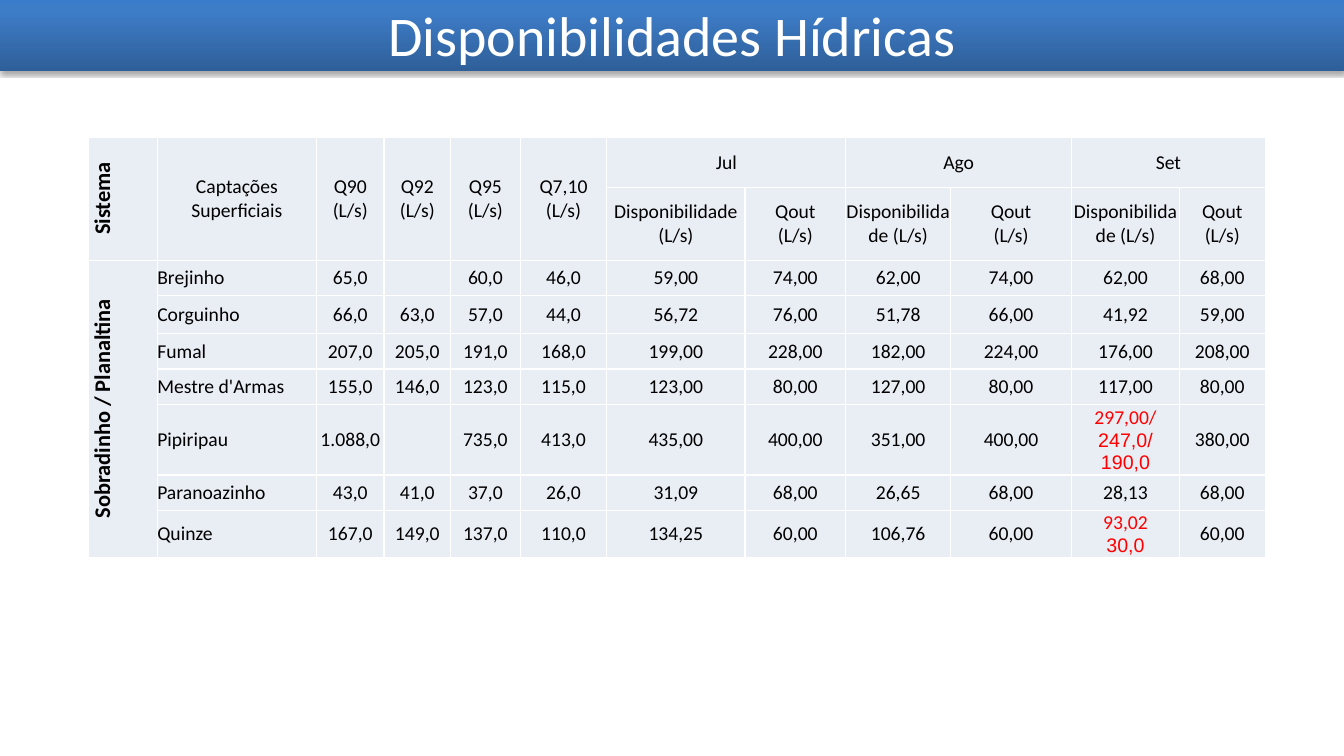
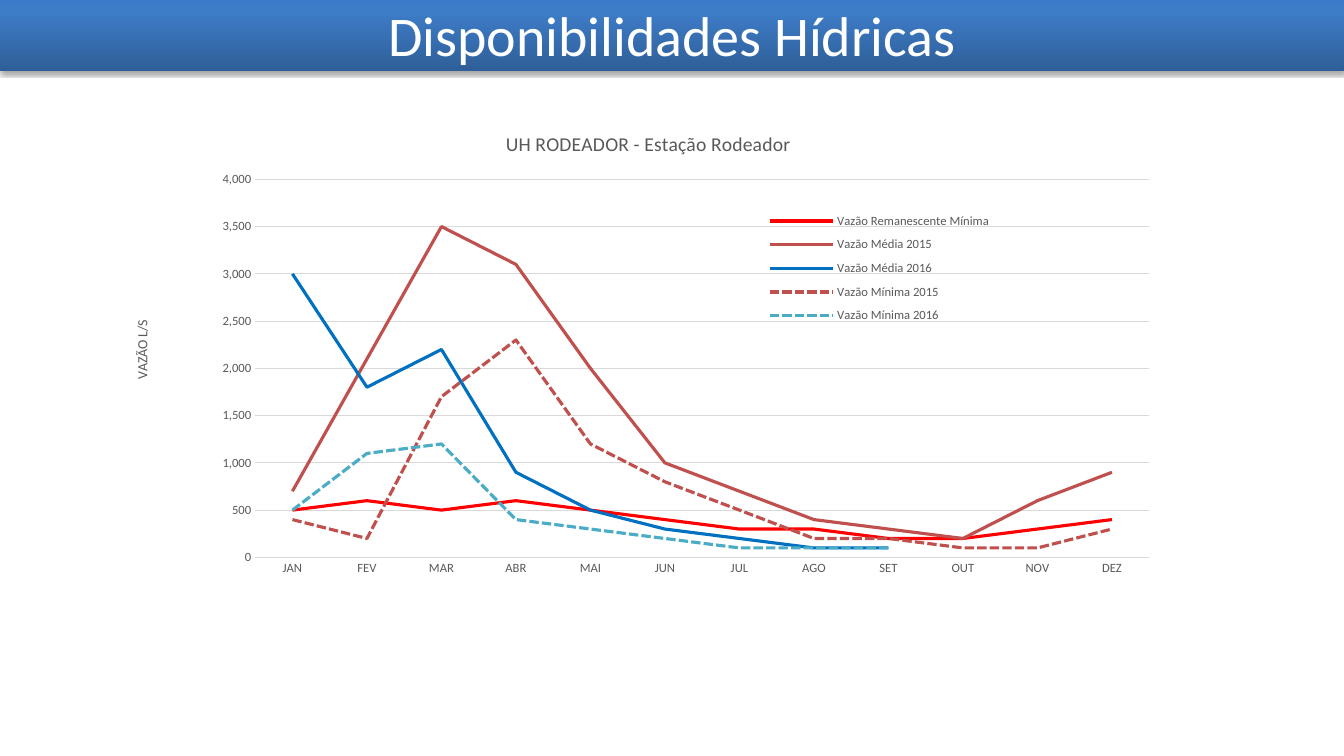
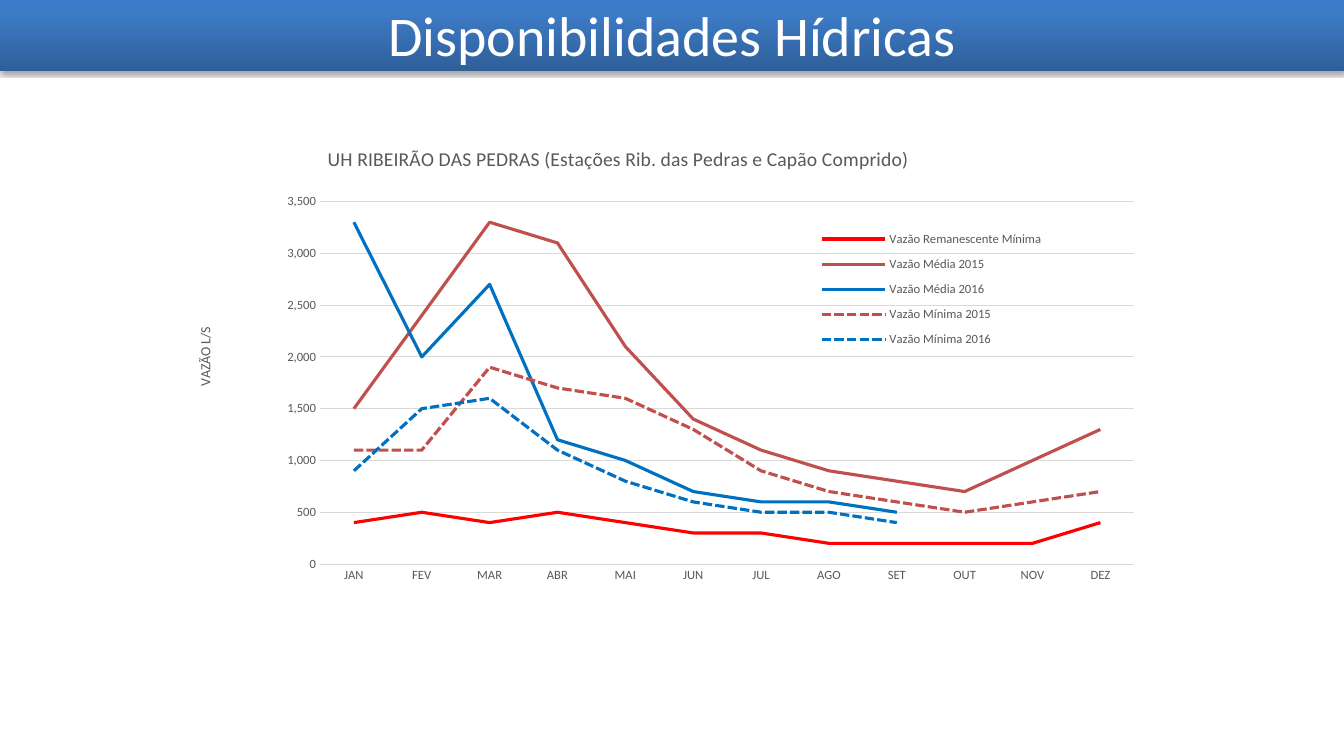
import pptx
import pptx.chart.data
import pptx.dml.color
import pptx.enum.chart
import pptx.enum.dml
import pptx.enum.text
import pptx.oxml
import pptx.oxml.ns
import pptx.util
from pptx.util import Inches, Pt

RGBColor = pptx.dml.color.RGBColor
WHITE = RGBColor(0xFF, 0xFF, 0xFF)
BLACK = RGBColor(0x00, 0x00, 0x00)
GREY = RGBColor(0x59, 0x59, 0x59)
GRID_GREY = RGBColor(0xD9, 0xD9, 0xD9)
CELL_FILL = RGBColor(0xE9, 0xED, 0xF4)
RED = RGBColor(0xFF, 0x00, 0x00)
BRICK = RGBColor(0xC0, 0x50, 0x4D)
BLUE = RGBColor(0x00, 0x70, 0xC0)
AQUA = RGBColor(0x4B, 0xAC, 0xC6)
BAND_STOPS = (
    (0, RGBColor(0x2F, 0x5F, 0x99)),
    (80, RGBColor(0x3D, 0x7C, 0xC7)),
    (100, RGBColor(0x3A, 0x7C, 0xCB)),
)
FONT = "Calibri"
TITLE = "Disponibilidades Hídricas"
TITLE_ONLY_LAYOUT = 5
DRAWING = pptx.oxml.ns.nsdecls("a")

# Table content
COLUMN_WIDTHS = (0.68, 1.58, 0.67, 0.66, 0.69, 0.86, 1.37, 1, 1.04, 1.2, 1.07, 0.85)
ROW_HEIGHTS = (0.5, 0.69, 0.35, 0.38) + (0.35,) * 5
HEADINGS = ("Captações Superficiais", "Q90 (L/s)", "Q92 (L/s)", "Q95 (L/s)", "Q7,10 (L/s)")
MONTH_GROUPS = ("Jul", "Ago", "Set")
INTAKES = (
    ("Brejinho", "65,0", "", "60,0", "46,0",
     "59,00", "74,00", "62,00", "74,00", "62,00", "68,00"),
    ("Corguinho", "66,0", "63,0", "57,0", "44,0",
     "56,72", "76,00", "51,78", "66,00", "41,92", "59,00"),
    ("Fumal", "207,0", "205,0", "191,0", "168,0",
     "199,00", "228,00", "182,00", "224,00", "176,00", "208,00"),
    ("Mestre d'Armas", "155,0", "146,0", "123,0", "115,0",
     "123,00", "80,00", "127,00", "80,00", "117,00", "80,00"),
    ("Pipiripau", "1.088,0", "", "735,0", "413,0",
     "435,00", "400,00", "351,00", "400,00", "297,00/\n247,0/\n190,0", "380,00"),
    ("Paranoazinho", "43,0", "41,0", "37,0", "26,0",
     "31,09", "68,00", "26,65", "68,00", "28,13", "68,00"),
    ("Quinze", "167,0", "149,0", "137,0", "110,0",
     "134,25", "60,00", "106,76", "60,00", "93,02\n30,0", "60,00"),
)

# Chart content
MONTHS = ("JAN", "FEV", "MAR", "ABR", "MAI", "JUN",
          "JUL", "AGO", "SET", "OUT", "NOV", "DEZ")
SERIES_NAMES = ("Vazão Remanescente Mínima", "Vazão Média 2015", "Vazão Média 2016",
                "Vazão Mínima 2015", "Vazão Mínima 2016")
RODEADOR = {
    "title": "UH RODEADOR - Estação Rodeador",
    "frame": (0.97, 1.06, 10.84, 4.86),
    "maximum": 4000,
    "plot": (0.144, 0.148, 0.818, 0.772),
    "title_at": (0.37, 0.04),
    "axis_title_at": (0.03, 0.43),
    "legend": (0.61, 0.2, 0.21, 0.26),
    "colors": (RED, BRICK, BLUE, BRICK, AQUA),
    "values": (
        (500, 600, 500, 600, 500, 400, 300, 300, 200, 200, 300, 400),
        (700, 2100, 3500, 3100, 2000, 1000, 700, 400, 300, 200, 600, 900),
        (3000, 1800, 2200, 900, 500, 300, 200, 100, 100, None, None, None),
        (400, 200, 1700, 2300, 1200, 800, 500, 200, 200, 100, 100, 300),
        (500, 1100, 1200, 400, 300, 200, 100, 100, 100, None, None, None),
    ),
}
RIBEIRAO = {
    "title": "UH RIBEIRÃO DAS PEDRAS (Estações Rib. das Pedras e Capão Comprido)",
    "frame": (1.62, 1.31, 9.96, 4.66),
    "maximum": 3500,
    "plot": (0.156, 0.148, 0.811, 0.772),
    "title_at": (0.16, 0.02),
    "axis_title_at": (0.03, 0.41),
    "legend": (0.65, 0.19, 0.23, 0.29),
    "colors": (RED, BRICK, BLUE, BRICK, BLUE),
    "values": (
        (400, 500, 400, 500, 400, 300, 300, 200, 200, 200, 200, 400),
        (1500, 2400, 3300, 3100, 2100, 1400, 1100, 900, 800, 700, 1000, 1300),
        (3300, 2000, 2700, 1200, 1000, 700, 600, 600, 500, None, None, None),
        (1100, 1100, 1900, 1700, 1600, 1300, 900, 700, 600, 500, 600, 700),
        (900, 1500, 1600, 1100, 800, 600, 500, 500, 400, None, None, None),
    ),
}


def style_font(font, size, color, bold=False, name=FONT):
    font.size = Pt(size)
    font.name = name
    font.bold = bold
    font.color.rgb = color


# Shared title band
def add_titled_slide(presentation):
    slide = presentation.slides.add_slide(presentation.slide_layouts[TITLE_ONLY_LAYOUT])
    title = slide.shapes.title
    title.left, title.top = 0, 0
    title.width, title.height = presentation.slide_width, Inches(0.67)
    stops = "".join(f'<a:gs pos="{position * 1000}"><a:srgbClr val="{color}"/></a:gs>'
                    for position, color in BAND_STOPS)
    properties = title.element.spPr
    properties.append(pptx.oxml.parse_xml(
        f'<a:gradFill {DRAWING} rotWithShape="1"><a:gsLst>{stops}</a:gsLst>'
        '<a:lin ang="16200000" scaled="0"/></a:gradFill>'))
    properties.append(pptx.oxml.parse_xml(
        f'<a:effectLst {DRAWING}><a:outerShdw blurRad="{Pt(3.1)}" dist="{Pt(1.8)}" '
        'dir="5400000" rotWithShape="0"><a:srgbClr val="000000"><a:alpha val="35000"/>'
        '</a:srgbClr></a:outerShdw></a:effectLst>'))
    frame = title.text_frame
    frame.margin_left = frame.margin_right = frame.margin_top = frame.margin_bottom = 0
    frame.auto_size = pptx.enum.text.MSO_AUTO_SIZE.SHAPE_TO_FIT_TEXT
    frame.text = TITLE
    paragraph = frame.paragraphs[0]
    paragraph.alignment = pptx.enum.text.PP_ALIGN.CENTER
    style_font(paragraph.font, 40, WHITE)
    return slide


# Table
def format_cell(cell):
    cell.fill.solid()
    cell.fill.fore_color.rgb = CELL_FILL
    cell.vertical_anchor = pptx.enum.text.MSO_ANCHOR.MIDDLE
    cell.margin_left = cell.margin_right = cell.margin_top = cell.margin_bottom = 0
    properties = cell._tc.get_or_add_tcPr()
    for index, side in enumerate(("lnL", "lnR", "lnT", "lnB")):
        properties.insert(index, pptx.oxml.parse_xml(
            f'<a:{side} {DRAWING} w="{Pt(1)}"><a:solidFill>'
            f'<a:srgbClr val="{WHITE}"/></a:solidFill></a:{side}>'))


def write_cell(cell, text, left=False):
    """Write one paragraph per line; values of several lines are red."""
    lines = text.split("\n")
    cell.text_frame.text = text
    for index, paragraph in enumerate(cell.text_frame.paragraphs):
        alignments = pptx.enum.text.PP_ALIGN
        paragraph.alignment = alignments.LEFT if left else alignments.CENTER
        style_font(paragraph.font, 14, RED if len(lines) > 1 else BLACK,
                   name="Arial" if index else FONT)


def write_vertical_cell(cell, text):
    write_cell(cell, text)
    style_font(cell.text_frame.paragraphs[0].font, 16, BLACK, bold=True)
    cell._tc.get_or_add_tcPr().set("vert", "vert270")


def add_intake_table(slide):
    row_count, column_count = len(ROW_HEIGHTS), len(COLUMN_WIDTHS)
    table = slide.shapes.add_table(
        row_count, column_count, Inches(0.88), Inches(1.36),
        Inches(sum(COLUMN_WIDTHS)), Inches(sum(ROW_HEIGHTS))).table
    table.first_row = table.horz_banding = False
    for column, width in zip(table.columns, COLUMN_WIDTHS):
        column.width = Inches(width)
    for row, height in zip(table.rows, ROW_HEIGHTS):
        row.height = Inches(height)
    for cell in table.iter_cells():
        format_cell(cell)

    # Headings
    for column in range(len(HEADINGS) + 1):
        table.cell(0, column).merge(table.cell(1, column))
    write_vertical_cell(table.cell(0, 0), "Sistema")
    for column, heading in enumerate(HEADINGS, start=1):
        write_cell(table.cell(0, column), heading)
    for index, month in enumerate(MONTH_GROUPS):
        column = len(HEADINGS) + 1 + 2 * index
        table.cell(0, column).merge(table.cell(0, column + 1))
        write_cell(table.cell(0, column), month)
        write_cell(table.cell(1, column), "Disponibilidade (L/s)")
        write_cell(table.cell(1, column + 1), "Qout\v(L/s)")

    # Intakes
    table.cell(2, 0).merge(table.cell(row_count - 1, 0))
    write_vertical_cell(table.cell(2, 0), "Sobradinho / Planaltina")
    for row, intake in enumerate(INTAKES, start=2):
        for column, text in enumerate(intake, start=1):
            write_cell(table.cell(row, column), text, left=column == 1)


# Charts
def set_layout(parent, index, box, inner=False):
    """Place a chart part by fractions of the chart: x, y and optionally w, h."""
    for layout in parent.xpath("c:layout"):
        parent.remove(layout)
    target = '<c:layoutTarget val="inner"/>' if inner else ""
    modes = "".join(f'<c:{name}Mode val="edge"/>' for name in "xy")
    sizes = "".join(f'<c:{name} val="{value}"/>' for name, value in zip("xywh", box))
    parent.insert(index, pptx.oxml.parse_xml(
        f'<c:layout {pptx.oxml.ns.nsdecls("c")}><c:manualLayout>'
        f'{target}{modes}{sizes}</c:manualLayout></c:layout>'))


def write_chart_title(title, text, size):
    title.text_frame.text = text
    style_font(title.text_frame.paragraphs[0].font, size, GREY)


def format_axes(chart, maximum):
    tick_none = pptx.enum.chart.XL_TICK_MARK.NONE
    category_axis, value_axis = chart.category_axis, chart.value_axis
    for axis in (category_axis, value_axis):
        axis.major_tick_mark = axis.minor_tick_mark = tick_none
        style_font(axis.tick_labels.font, 9, GREY)
    value_axis.has_major_gridlines = True
    for line in (category_axis.format.line, value_axis.major_gridlines.format.line):
        line.color.rgb = GRID_GREY
        line.width = Pt(0.75)
    value_axis.format.line.fill.background()
    value_axis.minimum_scale, value_axis.maximum_scale = 0, maximum
    value_axis.major_unit = 500
    value_axis.tick_labels.number_format = "#,##0"
    value_axis.tick_labels.number_format_is_linked = False
    write_chart_title(value_axis.axis_title, "VAZÃO L/S", 10)


def add_flow_chart(slide, station):
    data = pptx.chart.data.CategoryChartData()
    data.categories = MONTHS
    for name, values in zip(SERIES_NAMES, station["values"]):
        data.add_series(name, values)
    chart = slide.shapes.add_chart(
        pptx.enum.chart.XL_CHART_TYPE.LINE,
        *(Inches(length) for length in station["frame"]), data).chart
    style_font(chart.font, 10, BLACK)
    chart.has_title = True
    write_chart_title(chart.chart_title, station["title"], 14)
    format_axes(chart, station["maximum"])

    chart.plots[0].vary_by_categories = False
    for series, color in zip(chart.plots[0].series, station["colors"]):
        series.smooth = False
        series.format.line.color.rgb = color
        series.format.line.width = Pt(2.25)
        if "Mínima 20" in series.name:
            series.format.line.dash_style = pptx.enum.dml.MSO_LINE.SQUARE_DOT

    chart.has_legend = True
    chart.legend.position = pptx.enum.chart.XL_LEGEND_POSITION.RIGHT
    chart.legend.include_in_layout = True
    style_font(chart.legend.font, 9, GREY)

    # Positions inside the chart
    root = chart.element
    axis_title = root.xpath(".//c:valAx/c:title")[0]
    body = axis_title.xpath(".//a:bodyPr")[0]
    body.set("rot", "-5400000")
    body.set("vert", "horz")
    set_layout(root.xpath("c:chart/c:plotArea")[0], 0, station["plot"], inner=True)
    set_layout(root.xpath("c:chart/c:title")[0], 1, station["title_at"])
    set_layout(axis_title, 1, station["axis_title_at"])
    set_layout(root.xpath("c:chart/c:legend")[0], 1, station["legend"])


def main():
    presentation = pptx.Presentation()
    presentation.slide_width = Inches(13.33)
    presentation.slide_height = Inches(7.5)
    add_intake_table(add_titled_slide(presentation))
    for station in (RODEADOR, RIBEIRAO):
        add_flow_chart(add_titled_slide(presentation), station)
    presentation.save("out.pptx")


if __name__ == "__main__":
    main()
